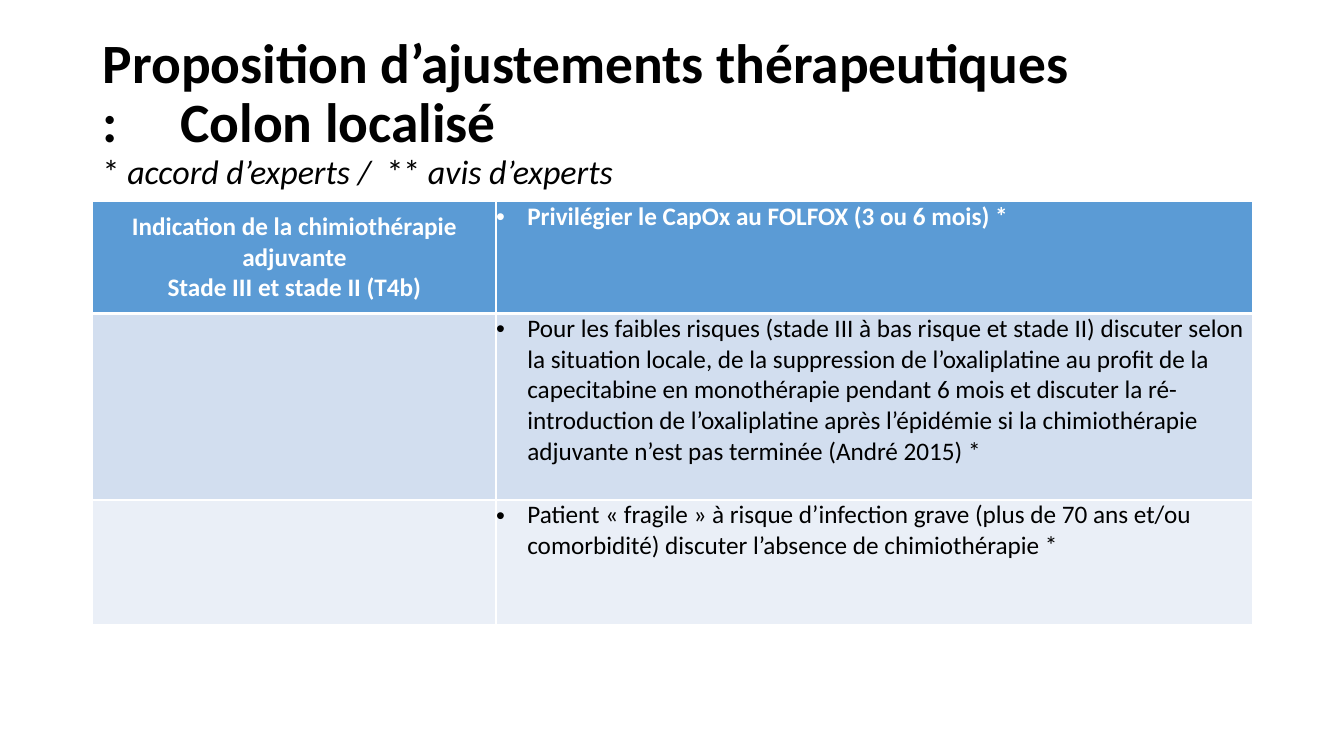
from dataclasses import dataclass

from lxml import etree
from pptx import Presentation
from pptx.dml.color import RGBColor
from pptx.enum.text import MSO_ANCHOR, PP_ALIGN
from pptx.oxml.ns import qn
from pptx.util import Inches, Pt

MIDDLE, TOP = MSO_ANCHOR.MIDDLE, MSO_ANCHOR.TOP
CENTER = PP_ALIGN.CENTER
FONT = "Calibri"
COLORS = {
    "black": "000000",
    "white": "FFFFFF",
    "header": "5B9BD5",
    "band_dark": "D2DEEF",
    "band_light": "EAEFF7",
}
COLUMN_WIDTHS = (4, 7.5)
INDENT = 0.31
TITLE_TAB = 0.77


@dataclass
class Span:
    text: str
    size: float
    bold: bool = False
    italic: bool = False


@dataclass
class Row:
    height: float
    fill: str
    ink: str
    bold: bool
    border_below: float
    indication: tuple[str, ...]
    advice: str


TITLE = Span("Proposition d’ajustements thérapeutiques :\tColon localisé", 39.6, bold=True)
LEGEND = [
    Span("* ", 24.3),
    Span("accord d’experts /  ", 24.3, italic=True),
    Span("** ", 24.3),
    Span("avis d’experts", 24.3, italic=True),
]
ROWS = [
    Row(1.11, "header", "white", True, 3,
        ("Indication de la chimiothérapie adjuvante", "Stade III et stade II (T4b)"),
        "Privilégier le CapOx au FOLFOX (3 ou 6 mois) *"),
    Row(1.85, "band_dark", "black", False, 1, (),
        "Pour les faibles risques (stade III à bas risque et stade II) discuter selon "
        "la situation locale, de la suppression de l’oxaliplatine au profit de la "
        "capecitabine en monothérapie pendant 6 mois et discuter la ré-introduction de "
        "l’oxaliplatine après l’épidémie si la chimiothérapie adjuvante n’est pas "
        "terminée (André 2015) *"),
    Row(1.24, "band_light", "black", False, 1, (),
        "Patient « fragile » à risque d’infection grave (plus de 70 ans et/ou "
        "comorbidité) discuter l’absence de chimiothérapie *"),
]


def add_span(para, span: Span, ink: str) -> None:
    run = para.add_run()
    run.text = span.text
    formats = {"name": FONT, "size": Pt(span.size), "bold": span.bold, "italic": span.italic}
    for name, value in formats.items():
        setattr(run.font, name, value)
    run.font.color.rgb = RGBColor.from_string(COLORS[ink])


def add_title(page) -> None:
    box = page.shapes.add_textbox(Inches(0.92), Inches(0.4), Inches(9.89), Inches(1.45))
    frame = box.text_frame
    frame.word_wrap = True
    frame.vertical_anchor = MIDDLE
    para = frame.paragraphs[0]
    para.line_spacing = 0.9
    # Tab stop that sets the gap after the colon
    stops = etree.SubElement(para._p.get_or_add_pPr(), qn("a:tabLst"))
    etree.SubElement(stops, qn("a:tab"), pos=str(Inches(TITLE_TAB)), algn="l")
    add_span(para, TITLE, "black")
    para.add_line_break()
    for span in LEGEND:
        add_span(para, span, "black")


def style_cell(cell, row: Row, border_above: float) -> None:
    properties = cell._tc.get_or_add_tcPr()
    widths = {"lnL": 1, "lnR": 1, "lnT": border_above, "lnB": row.border_below}
    for tag, width in widths.items():
        line = etree.SubElement(properties, qn(f"a:{tag}"), w=str(Pt(width)))
        solid = etree.SubElement(line, qn("a:solidFill"))
        etree.SubElement(solid, qn("a:srgbClr"), val=COLORS["white"])
    cell.fill.solid()
    cell.fill.fore_color.rgb = RGBColor.from_string(COLORS[row.fill])
    for side in ("left", "right", "top", "bottom"):
        setattr(cell, f"margin_{side}", 0)


def add_bullet(para) -> None:
    properties = para._p.get_or_add_pPr()
    properties.set("marL", str(Inches(INDENT)))
    properties.set("indent", str(-Inches(INDENT)))
    etree.SubElement(properties, qn("a:buFont"), typeface="Arial")
    etree.SubElement(properties, qn("a:buChar"), char="•")


def add_advice_table(page) -> None:
    frame = page.shapes.add_table(
        len(ROWS), len(COLUMN_WIDTHS), Inches(0.92), Inches(2),
        Inches(sum(COLUMN_WIDTHS)), Inches(sum(row.height for row in ROWS)))
    table = frame.table
    table.horz_banding = False
    for column, width in zip(table.columns, COLUMN_WIDTHS):
        column.width = Inches(width)

    border_above = 1
    for index, row in enumerate(ROWS):
        table.rows[index].height = Inches(row.height)
        left, right = table.cell(index, 0), table.cell(index, 1)
        for cell in (left, right):
            style_cell(cell, row, border_above)
        border_above = row.border_below

        # Indication, centred
        left.vertical_anchor = MIDDLE
        for number, text in enumerate(row.indication):
            text_frame = left.text_frame
            para = text_frame.add_paragraph() if number else text_frame.paragraphs[0]
            para.alignment = CENTER
            add_span(para, Span(text, 18, row.bold), row.ink)

        # Advice, bulleted
        right.vertical_anchor = TOP
        para = right.text_frame.paragraphs[0]
        add_bullet(para)
        add_span(para, Span(row.advice, 18, row.bold), row.ink)


def main() -> None:
    deck = Presentation()
    deck.slide_width, deck.slide_height = Inches(13.33), Inches(7.5)
    page = deck.slides.add_slide(deck.slide_layouts[6])
    add_title(page)
    add_advice_table(page)
    deck.save("out.pptx")


if __name__ == "__main__":
    main()
